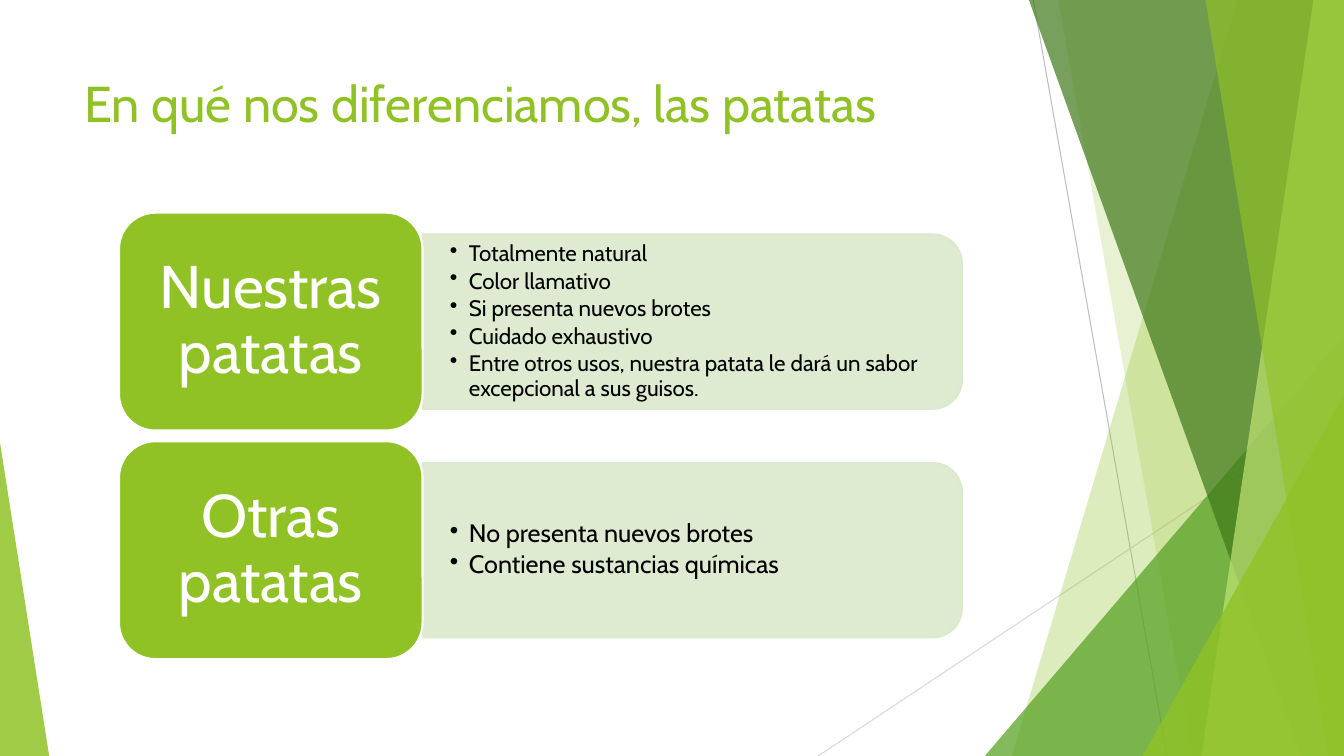
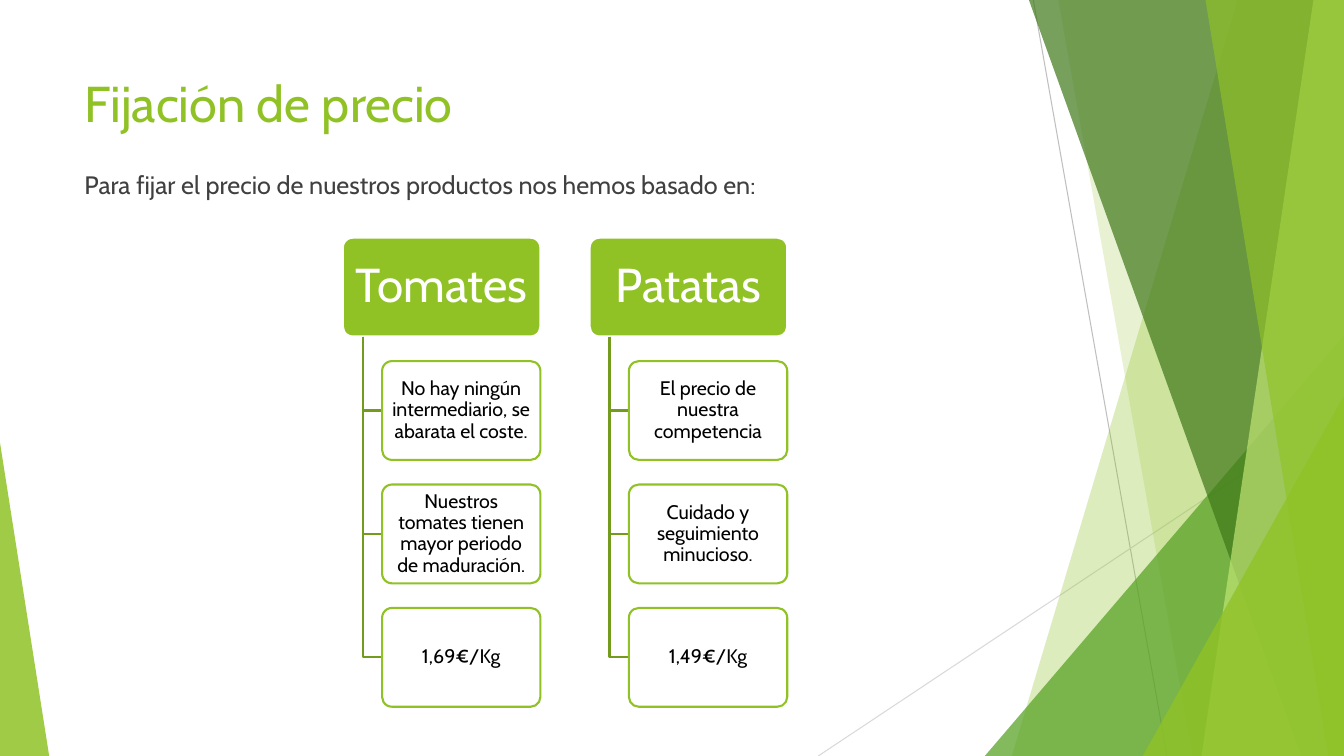
from dataclasses import dataclass

from lxml.etree import SubElement
from pptx import Presentation
from pptx.dml.color import RGBColor
from pptx.enum.shapes import MSO_CONNECTOR as Connector, MSO_SHAPE as Preset
from pptx.enum.text import MSO_ANCHOR as Anchor, PP_ALIGN as Align
from pptx.oxml.ns import qn
from pptx.util import Cm, Pt


@dataclass(frozen=True)
class Theme:
    font: str = "Cabin"
    green: str = "90C226"
    leaf: str = "54A021"
    forest: str = "3F7819"
    lime: str = "C0E474"
    branch: str = "739B1E"
    panel: str = "DBE9CD"
    white: str = "FFFFFF"
    black: str = "000000"
    body: str = "404040"
    dark_hairline: str = "BFBFBF"
    light_hairline: str = "D9D9D9"
    title_size: int = 36
    body_size: int = 18
    row_size: int = 43
    head_size: int = 34
    reason_size: int = 14
    outline: float = 1.5
    hairline: float = 0.75


THEME = Theme()
WIDTH, HEIGHT = 33.87, 19.05


def rgb(value):
    return RGBColor.from_string(value)


def paint(shape, fill=None, opacity=100, line=None):
    shape.shadow.inherit = False
    if fill:
        shape.fill.solid()
        shape.fill.fore_color.rgb = rgb(fill)
        if opacity < 100:
            color = shape.element.spPr.find(qn("a:solidFill"))[0]
            SubElement(color, qn("a:alpha"), val=str(opacity * 1000))
    else:
        shape.fill.background()
    if line:
        shape.line.color.rgb = rgb(line)
        shape.line.width = Pt(THEME.outline)
    else:
        shape.line.fill.background()


def add_preset(page, preset, box, fill, opacity=100, line=None, adjust=None):
    shape = page.shapes.add_shape(preset, *map(Cm, box))
    paint(shape, fill, opacity, line)
    if adjust is not None:
        shape.adjustments[0] = adjust
    return shape


def add_outline(page, points, closed, **look):
    start, *rest = [(Cm(x), Cm(y)) for x, y in points]
    builder = page.shapes.build_freeform(*start)
    builder.add_line_segments(rest, close=closed)
    paint(builder.convert_to_shape(), **look)


def add_hairline(page, ends, color):
    line = page.shapes.add_connector(Connector.STRAIGHT, *map(Cm, ends))
    line.line.color.rgb = rgb(color)
    line.line.width = Pt(THEME.hairline)
    SubElement(line.element.spPr, qn("a:effectLst"))


def write(shape, texts, size, color, align=Align.LEFT, anchor=Anchor.TOP,
          insets=(0.25, 0.13), spacing=1.0, bullets=False):
    frame = shape.text_frame
    frame.word_wrap = True
    frame.vertical_anchor = anchor
    frame.margin_left = frame.margin_right = Cm(insets[0])
    frame.margin_top = frame.margin_bottom = Cm(insets[1])
    for index, text in enumerate(texts):
        para = frame.add_paragraph() if index else frame.paragraphs[0]
        para.text = text
        para.alignment = align
        para.line_spacing = spacing
        if bullets:
            para.space_after = Pt(round(size * 0.15, 1))
            props = para._p.get_or_add_pPr()
            props.set("marL", str(Cm(0.48)))
            props.set("indent", str(Cm(-0.48)))
            SubElement(props, qn("a:buChar"), char="•")
        para.font.name = THEME.font
        para.font.size = Pt(size)
        para.font.color.rgb = rgb(color)


def add_text(page, box, texts, size, color, **style):
    write(page.shapes.add_textbox(*map(Cm, box)), texts, size, color, **style)


def add_card(page, box, text, size, color, insets, **look):
    card = add_preset(page, Preset.ROUNDED_RECTANGLE, box, **look)
    write(card, [text], size, color, align=Align.CENTER, anchor=Anchor.MIDDLE,
          insets=insets, spacing=0.9)


def add_band(page, top_x, bottom_x, color, opacity):
    points = [(top_x, 0), (WIDTH, 0), (WIDTH, HEIGHT), (bottom_x, HEIGHT)]
    add_outline(page, points, True, fill=color, opacity=opacity)


def add_corner(page, left, top, width, color, opacity, apex):
    add_preset(page, Preset.ISOSCELES_TRIANGLE, (left, top, width, HEIGHT - top),
               color, opacity, adjust=apex)


def add_page(deck, title):
    page = deck.slides.add_slide(deck.slide_layouts[6])
    add_hairline(page, (26.04, 0, 29.41, HEIGHT), THEME.dark_hairline)
    add_hairline(page, (WIDTH, 10.24, 20.62, HEIGHT), THEME.light_hairline)
    add_band(page, 31.19, 25.5, THEME.green, 30)
    add_band(page, 26.67, 30.05, THEME.green, 20)
    add_corner(page, 24.82, 8.46, WIDTH - 24.82, THEME.leaf, 72, 1)
    add_band(page, 25.93, 32.79, THEME.forest, 70)
    add_band(page, 33.1, 30.28, THEME.lime, 70)
    add_band(page, 30.38, 33.48, THEME.green, 65)
    add_corner(page, 28.8, 9.98, WIDTH - 28.8, THEME.green, 80, 1)
    add_corner(page, 0, 11.15, 1.24, THEME.green, 85, 0)
    add_text(page, (1.88, 1.7, 23.88, 3.66), [title], THEME.title_size, THEME.green)
    return page


def add_comparison_row(page, top, label, points, size):
    left, label_width, label_height = 3, 7.65, 5.49
    panel_width, panel_height = 13.59, 4.39
    panel_left = left + label_width
    middle = top + label_height / 2
    upright = (panel_left + (panel_width - panel_height) / 2,
               middle - panel_width / 2, panel_height, panel_width)
    panel = add_preset(page, Preset.ROUND_2_SAME_RECTANGLE, upright,
                       THEME.panel, 90, THEME.panel)
    panel.rotation = 90
    text_height = 3.96
    add_text(page, (panel_left, middle - text_height / 2, 13.36, text_height),
             points, size, THEME.black, anchor=Anchor.MIDDLE,
             insets=(0.69, 0.36), spacing=0.9, bullets=True)
    add_card(page, (left, top, label_width, label_height), label, THEME.row_size,
             THEME.white, (0.46, 0.23), fill=THEME.green, line=THEME.white)


def add_price_column(page, left, heading, reasons):
    top, height, pitch = 5.99, 2.49, 3.11
    stem, reason_left = left + 0.5, left + 0.99
    add_card(page, (left, top, 4.98, height), heading, THEME.head_size, THEME.white,
             (0.18, 0.13), fill=THEME.green, line=THEME.white, adjust=0.1)
    for row, reason in enumerate(reasons, 1):
        reason_top = top + row * pitch
        middle = reason_top + height / 2
        elbow = [(stem, top + height), (stem, middle), (reason_left, middle)]
        add_outline(page, elbow, False, line=THEME.branch)
        add_card(page, (reason_left, reason_top, 3.99, height), reason,
                 THEME.reason_size, THEME.black, (0.08, 0.05), fill=THEME.white,
                 opacity=90, line=THEME.green, adjust=0.1)


def build_differences(deck):
    page = add_page(deck, "En qué nos diferenciamos, las patatas")
    rows = [
        ("Nuestras patatas", 16, [
            "Totalmente natural",
            "Color llamativo",
            "Si presenta nuevos brotes",
            "Cuidado exhaustivo",
            "Entre otros usos, nuestra patata le dará un sabor excepcional a sus guisos.",
        ]),
        ("Otras patatas", 18, [
            "No presenta nuevos brotes",
            "Contiene sustancias químicas",
        ]),
    ]
    for index, (label, size, points) in enumerate(rows):
        add_comparison_row(page, 5.36 + index * 5.76, label, points, size)


def build_pricing(deck):
    page = add_page(deck, "Fijación de precio")
    add_text(page, (1.88, 4.14, 23.88, 1.85),
             ["Para fijar el precio de nuestros productos nos hemos basado en:"],
             THEME.body_size, THEME.body)
    columns = {
        "Tomates": [
            "No hay ningún intermediario, se abarata el coste.",
            "Nuestros tomates tienen mayor periodo de maduración.",
            "1,69€/Kg",
        ],
        "Patatas": [
            "El precio de nuestra competencia",
            "Cuidado y seguimiento minucioso.",
            "1,49€/Kg",
        ],
    }
    for index, (heading, reasons) in enumerate(columns.items()):
        add_price_column(page, 8.64 + index * 6.22, heading, reasons)


def main():
    deck = Presentation()
    deck.slide_width, deck.slide_height = Cm(WIDTH), Cm(HEIGHT)
    build_differences(deck)
    build_pricing(deck)
    deck.save("out.pptx")


if __name__ == "__main__":
    main()
